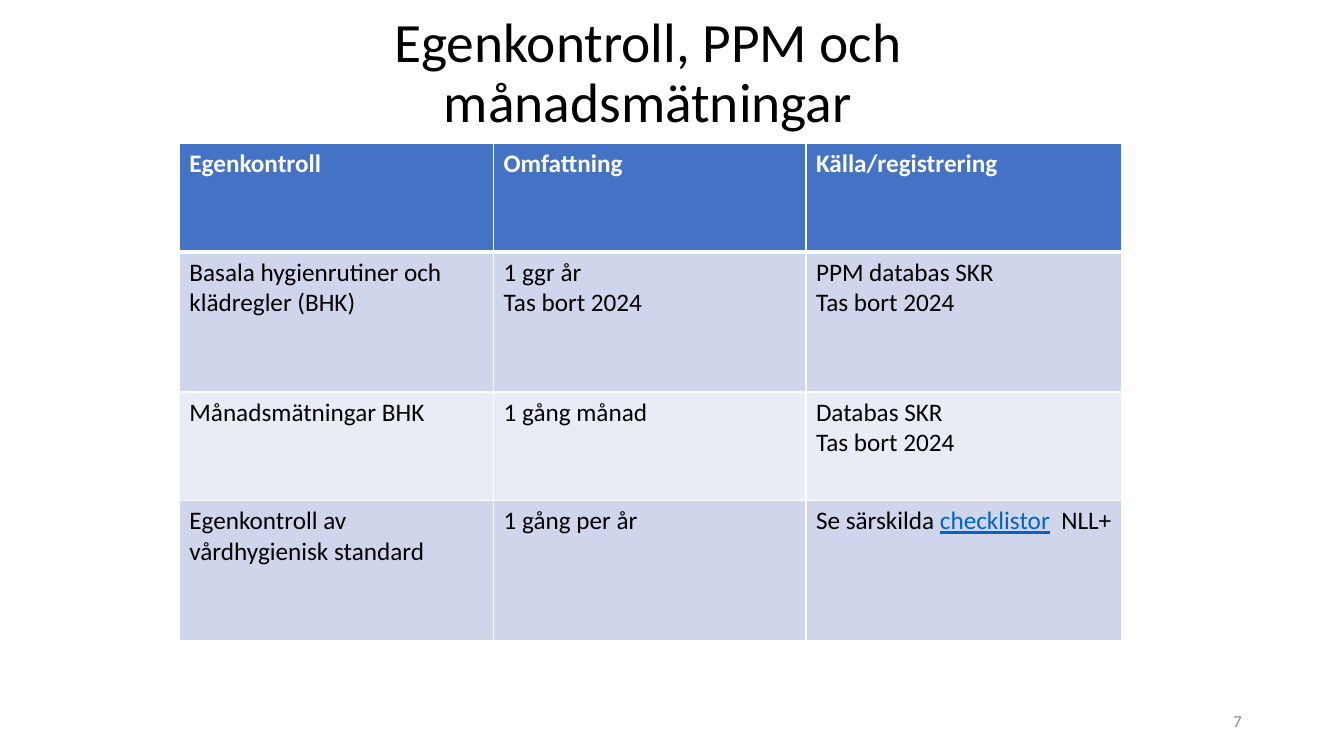
import dataclasses

import lxml.etree
import pptx
import pptx.dml.color
import pptx.enum.text
import pptx.oxml.ns
import pptx.util

Cm = pptx.util.Cm
Pt = pptx.util.Pt
RGB = pptx.dml.color.RGBColor.from_string


@dataclasses.dataclass(frozen=True)
class Theme:
    font: str = "Calibri"
    title_size: float = 39.6
    body_size: float = 18
    number_size: float = 12
    ink: str = "000000"
    muted: str = "8C8C8C"
    link: str = "0563C1"
    header_ink: str = "FFFFFF"
    header_fill: str = "4472C4"
    band_fills: tuple = ("E9EBF5", "CFD5EA")
    rule: str = "FFFFFF"
    rule_width: float = 1
    header_rule_width: float = 3


theme = Theme()


def style_text(frame, size, color, bold=False):
    for paragraph in frame.paragraphs:
        for run in paragraph.runs:
            run.font.name = theme.font
            run.font.size = Pt(size)
            run.font.bold = bold
            run.font.color.rgb = RGB(color)


def add_borders(cell, widths):
    """Draw the cell's sides; widths maps L, R, T, B (in that order) to points."""
    properties = cell._tc.get_or_add_tcPr()
    for position, (side, width) in enumerate(widths.items()):
        line = lxml.etree.Element(pptx.oxml.ns.qn(f"a:ln{side}"), w=str(Pt(width)))
        fill = lxml.etree.SubElement(line, pptx.oxml.ns.qn("a:solidFill"))
        lxml.etree.SubElement(fill, pptx.oxml.ns.qn("a:srgbClr"), val=theme.rule)
        properties.insert(position, line)


presentation = pptx.Presentation()
presentation.slide_width = Cm(33.87)
presentation.slide_height = Cm(19.05)
slide = presentation.slides.add_slide(presentation.slide_layouts[6])

# Title, raised above the box's middle by its bottom inset
title = slide.shapes.add_textbox(Cm(4.39), Cm(0.86), Cm(23.88), Cm(3.66)).text_frame
title.word_wrap = True
title.vertical_anchor = pptx.enum.text.MSO_ANCHOR.MIDDLE
title.margin_left = title.margin_right = Cm(0.5)
title.margin_bottom = Cm(1.75)
title.text = "Egenkontroll, PPM och månadsmätningar"
title.paragraphs[0].alignment = pptx.enum.text.PP_ALIGN.CENTER
title.paragraphs[0].line_spacing = 0.9
style_text(title, theme.title_size, theme.ink)

# Page number
page_number = slide.shapes.add_textbox(Cm(23.93), Cm(17.65), Cm(7.62), Cm(1.02)).text_frame
page_number.word_wrap = True
page_number.vertical_anchor = pptx.enum.text.MSO_ANCHOR.MIDDLE
page_number.text = "7"
page_number.paragraphs[0].alignment = pptx.enum.text.PP_ALIGN.RIGHT
style_text(page_number, theme.number_size, theme.muted)

# Table of self-checks
checks = [
    ["Egenkontroll", "Omfattning", "Källa/registrering"],
    ["Basala hygienrutiner och klädregler (BHK)", "1 ggr år\nTas bort 2024",
     "PPM databas SKR\nTas bort 2024"],
    ["Månadsmätningar BHK", "1 gång månad", "Databas SKR\nTas bort 2024"],
    ["Egenkontroll av vårdhygienisk standard", "1 gång per år", "Se särskilda "],
]
column_widths = [7.92, 7.87, 7.95]
row_heights = [2.74, 3.53, 2.74, 3.53]

table = slide.shapes.add_table(
    len(checks), len(column_widths), Cm(4.52), Cm(3.61),
    Cm(sum(column_widths)), Cm(sum(row_heights))).table
for column, width in zip(table.columns, column_widths):
    column.width = Cm(width)
for row, height in zip(table.rows, row_heights):
    row.height = Cm(height)

for row_index, row_texts in enumerate(checks):
    is_header = row_index == 0
    fill = theme.header_fill if is_header else theme.band_fills[row_index % 2]
    ink = theme.header_ink if is_header else theme.ink
    top = theme.header_rule_width if row_index == 1 else theme.rule_width
    bottom = theme.header_rule_width if is_header else theme.rule_width
    for column_index, text in enumerate(row_texts):
        cell = table.cell(row_index, column_index)
        cell.text_frame.text = text
        style_text(cell.text_frame, theme.body_size, ink, bold=is_header)
        cell.fill.solid()
        cell.fill.fore_color.rgb = RGB(fill)
        add_borders(cell, {"L": theme.rule_width, "R": theme.rule_width,
                           "T": top, "B": bottom})

# The last cell continues with an underlined word
checklist_cell = table.cell(3, 2).text_frame
checklist_word = checklist_cell.paragraphs[0].add_run()
checklist_word.text = "checklistor"
checklist_cell.paragraphs[0].add_run().text = "  NLL+"
style_text(checklist_cell, theme.body_size, theme.ink)
checklist_word.font.underline = True
checklist_word.font.color.rgb = RGB(theme.link)

presentation.save("out.pptx")
